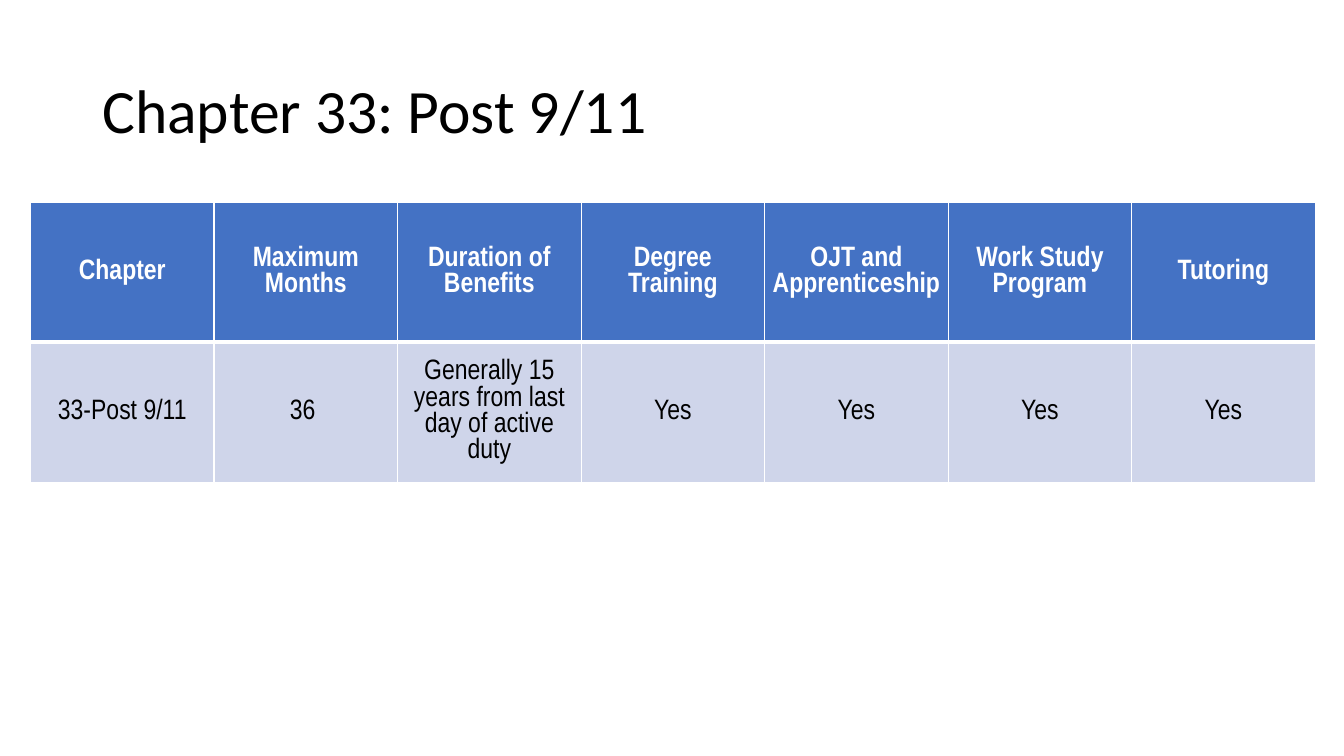
from lxml import etree
from pptx import Presentation
from pptx.dml.color import RGBColor
from pptx.enum import text
from pptx.oxml.ns import qn
from pptx.util import Cm, Pt

WHITE = RGBColor(0xFF, 0xFF, 0xFF)
BLACK = RGBColor(0x00, 0x00, 0x00)
BLUE = RGBColor(0x44, 0x72, 0xC4)
PALE_BLUE = RGBColor(0xCF, 0xD5, 0xEA)

BENEFITS = [
    ["Chapter", "Maximum Months", "Duration of Benefits", "Degree Training",
     "OJT and Apprenticeship", "Work Study Program", "Tutoring"],
    ["33-Post 9/11", "36 ", "Generally 15 years from last day of active duty",
     "Yes", "Yes", "Yes", "Yes"],
]


def add_run(p, words, font, size, color, bold=False):
    r = p.add_run()
    r.text = words
    r.font.name, r.font.size, r.font.bold = font, Pt(size), bold
    r.font.color.rgb = color


def add_border(cell, side, width):
    ln = etree.SubElement(cell._tc.get_or_add_tcPr(), qn(f"a:ln{side}"), w=str(Pt(width)))
    fill = etree.SubElement(ln, qn("a:solidFill"))
    etree.SubElement(fill, qn("a:srgbClr"), val=str(WHITE))


def add_title(slide, left, top, width, height):
    tf = slide.shapes.add_textbox(left, top, width, height).text_frame
    tf.word_wrap = True
    tf.vertical_anchor = text.MSO_ANCHOR.MIDDLE
    p = tf.paragraphs[0]
    p.line_spacing = 0.9
    add_run(p, "Chapter 33: Post 9/11", "Calibri", 44, BLACK)


def style_cell(cell, words, is_header):
    # Borders: the rule under the header is heavier
    heavy_side = "B" if is_header else "T"
    for side in "LRTB":
        add_border(cell, side, 3 if side == heavy_side else 1)
    cell.fill.solid()
    cell.fill.fore_color.rgb = BLUE if is_header else PALE_BLUE

    # Text
    cell.margin_left = cell.margin_right = Cm(0.18)
    cell.margin_top = cell.margin_bottom = 0
    cell.vertical_anchor = text.MSO_ANCHOR.MIDDLE
    p = cell.text_frame.paragraphs[0]
    p.alignment = text.PP_ALIGN.CENTER
    p.space_before, p.space_after = Pt(18), Pt(6)
    add_run(p, words, "Arial Narrow", 20, WHITE if is_header else BLACK, is_header)


def add_benefits_table(slide, left, top, width, height):
    rows, cols = len(BENEFITS), len(BENEFITS[0])
    table = slide.shapes.add_table(rows, cols, left, top, width, height).table
    for i, row in enumerate(BENEFITS):
        for j, words in enumerate(row):
            style_cell(table.cell(i, j), words, is_header=i == 0)


def main():
    prs = Presentation()
    prs.slide_width, prs.slide_height = Cm(33.87), Cm(19.05)
    slide = prs.slides.add_slide(prs.slide_layouts[6])
    add_title(slide, Cm(2.33), Cm(1.01), Cm(29.21), Cm(3.68))
    add_benefits_table(slide, Cm(0.77), Cm(5.09), Cm(32.38), Cm(7.06))
    prs.save("out.pptx")


if __name__ == "__main__":
    main()
